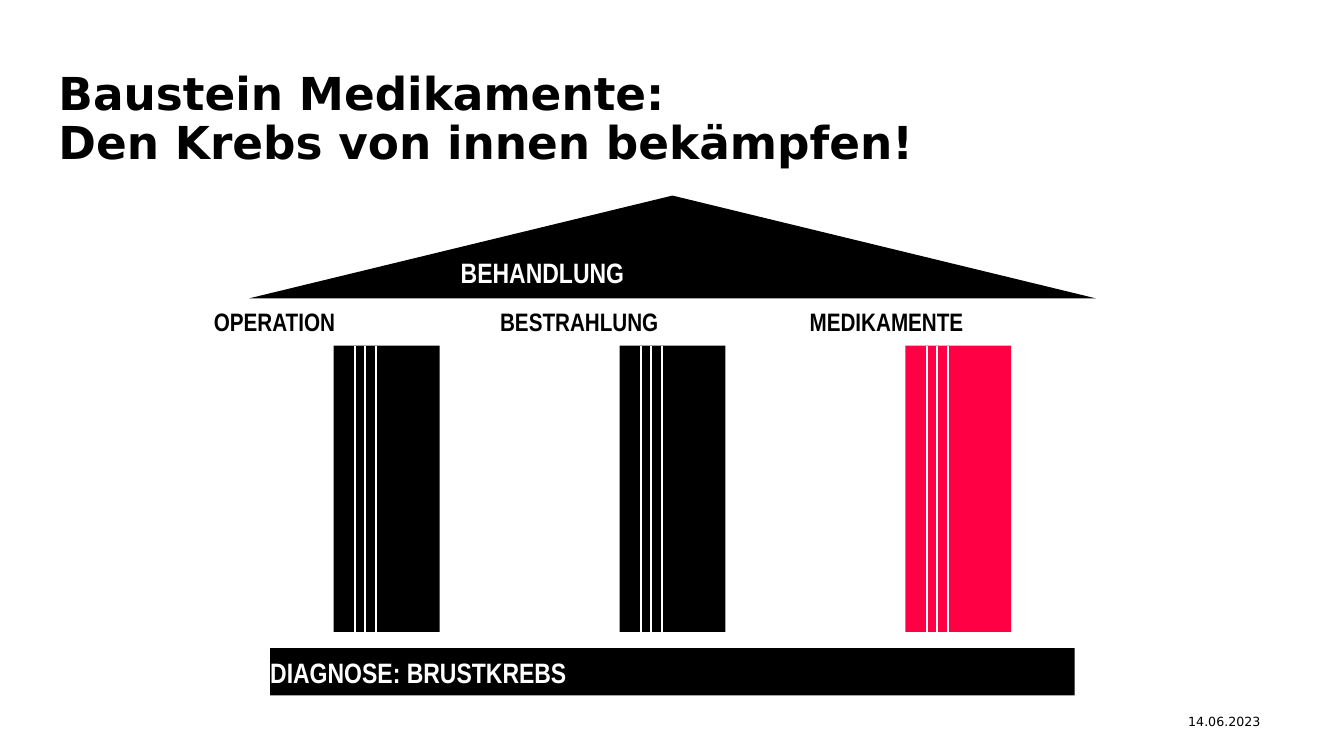
"""Builds the treatment temple slide: roof, three pillars and a base."""
from lxml import etree
from pptx import Presentation
from pptx.dml.color import RGBColor
from pptx.enum.shapes import MSO_CONNECTOR, MSO_SHAPE
from pptx.enum.text import MSO_ANCHOR, PP_ALIGN
from pptx.oxml.ns import qn
from pptx.util import Inches, Pt

RECTANGLE, TRIANGLE = MSO_SHAPE.RECTANGLE, MSO_SHAPE.ISOSCELES_TRIANGLE
STRAIGHT = MSO_CONNECTOR.STRAIGHT
TOP, MIDDLE = MSO_ANCHOR.TOP, MSO_ANCHOR.MIDDLE
LEFT, RIGHT = PP_ALIGN.LEFT, PP_ALIGN.RIGHT
BLACK, WHITE, RED = "000000", "FFFFFF", "FF0045"
HEADING_FONT, LABEL_FONT = "DejaVu Sans", "Arial Narrow"


def paint(color_format, color):
    color_format.rgb = RGBColor.from_string(color)


def write(shape, lines, size, font, color, bold=True, anchor=TOP, align=LEFT):
    frame = shape.text_frame
    frame.word_wrap = True
    frame.vertical_anchor = anchor
    frame.margin_left = frame.margin_right = frame.margin_top = frame.margin_bottom = 0
    paragraph = frame.paragraphs[0]
    paragraph.alignment = align
    for index, line in enumerate(lines):
        if index:
            paragraph.add_line_break()
        run = paragraph.add_run()
        run.text = line
        run.font.size, run.font.name, run.font.bold = Pt(size), font, bold
        paint(run.font.color, color)
    return frame


prs = Presentation()
prs.slide_width, prs.slide_height = Inches(13.33), Inches(7.5)
slide = prs.slides.add_slide(prs.slide_layouts[6])
shapes = slide.shapes

title = shapes.add_textbox(Inches(0.58), Inches(0.71), Inches(10.81), Inches(0.89))
title_frame = write(title, ["Baustein Medikamente:", "Den Krebs von innen bekämpfen!"],
                    32.4, HEADING_FONT, BLACK)
title_frame.paragraphs[0].line_spacing = 0.9

for kind, caption, left, top, width, height in [
    (RECTANGLE, "DIAGNOSE: BRUSTKREBS", 2.68, 6.43, 7.98, 0.47),
    (TRIANGLE, "BEHANDLUNG", 2.47, 1.94, 8.4, 1.02),
]:
    block = shapes.add_shape(kind, Inches(left), Inches(top), Inches(width), Inches(height))
    block.shadow.inherit = False
    block.fill.solid()
    paint(block.fill.fore_color, BLACK)
    block.line.fill.background()
    write(block, [caption], 20, LABEL_FONT, WHITE, anchor=MIDDLE)

pillar_top, pillar_height = 3.43, 2.84
for index, (treatment, label_left, label_width, color) in enumerate([
    ("OPERATION", 2.12, 3.41, BLACK),
    ("BESTRAHLUNG", 4.96, 3.41, BLACK),
    ("MEDIKAMENTE", 8.03, 2.94, RED),
]):
    label = shapes.add_textbox(Inches(label_left), Inches(3.04), Inches(label_width), Inches(0.3))
    write(label, [treatment], 18, LABEL_FONT, BLACK)

    pillar_left = 3.31 + index * 2.835
    pillar = shapes.add_group_shape()
    shaft = pillar.shapes.add_shape(RECTANGLE, Inches(pillar_left), Inches(pillar_top),
                                    Inches(1.05), Inches(pillar_height))
    shaft.shadow.inherit = False
    shaft.fill.solid()
    paint(shaft.fill.fore_color, color)
    shaft.line.fill.background()
    for offset in (0.21, 0.31, 0.42):
        groove_x = Inches(pillar_left + offset)
        groove = pillar.shapes.add_connector(STRAIGHT, groove_x, Inches(pillar_top),
                                             groove_x, Inches(pillar_top + pillar_height))
        paint(groove.line.color, WHITE)
        groove.line.width = Pt(1.5)
        etree.SubElement(groove._element.spPr, qn("a:effectLst"))

date = shapes.add_textbox(Inches(11.55), Inches(6.98), Inches(0.95), Inches(0.39))
date_frame = write(date, ["14.06.2023"], 9, HEADING_FONT, BLACK, False, MIDDLE, RIGHT)
date_frame.margin_bottom = Inches(0.04)

prs.save("out.pptx")
